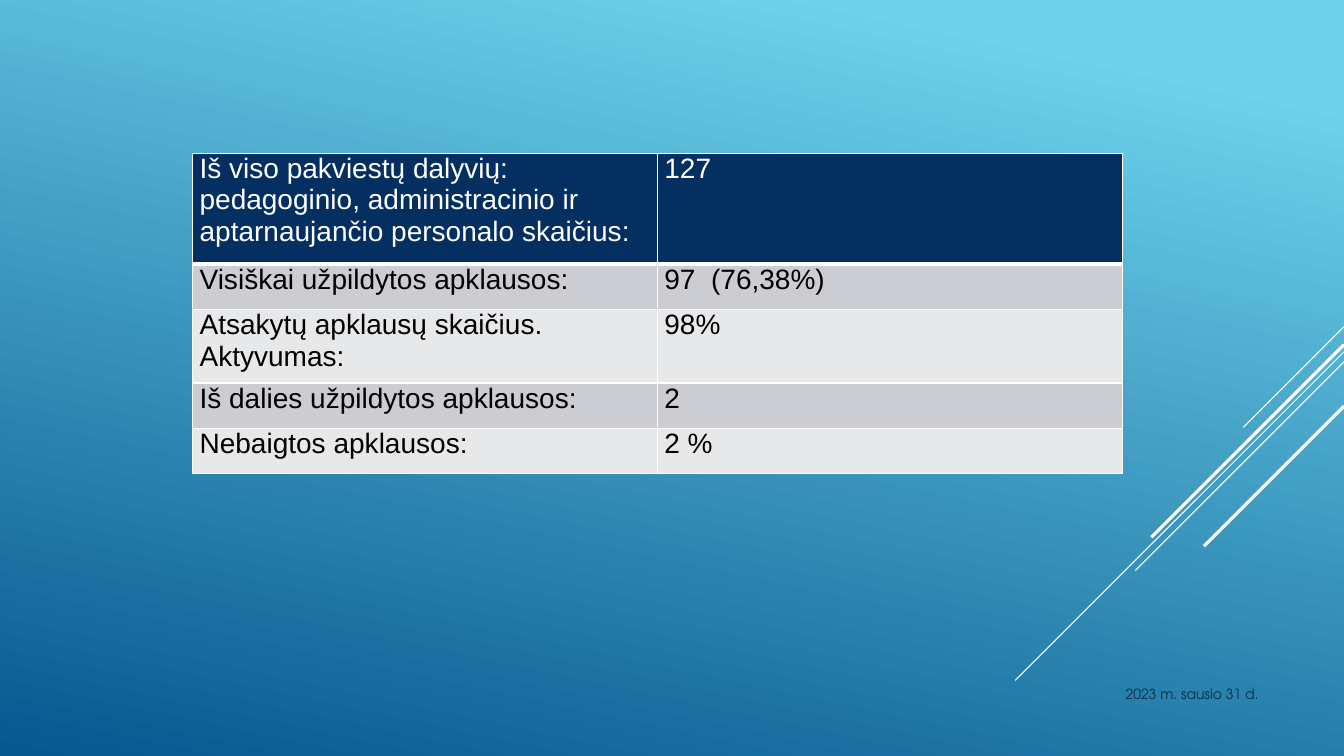
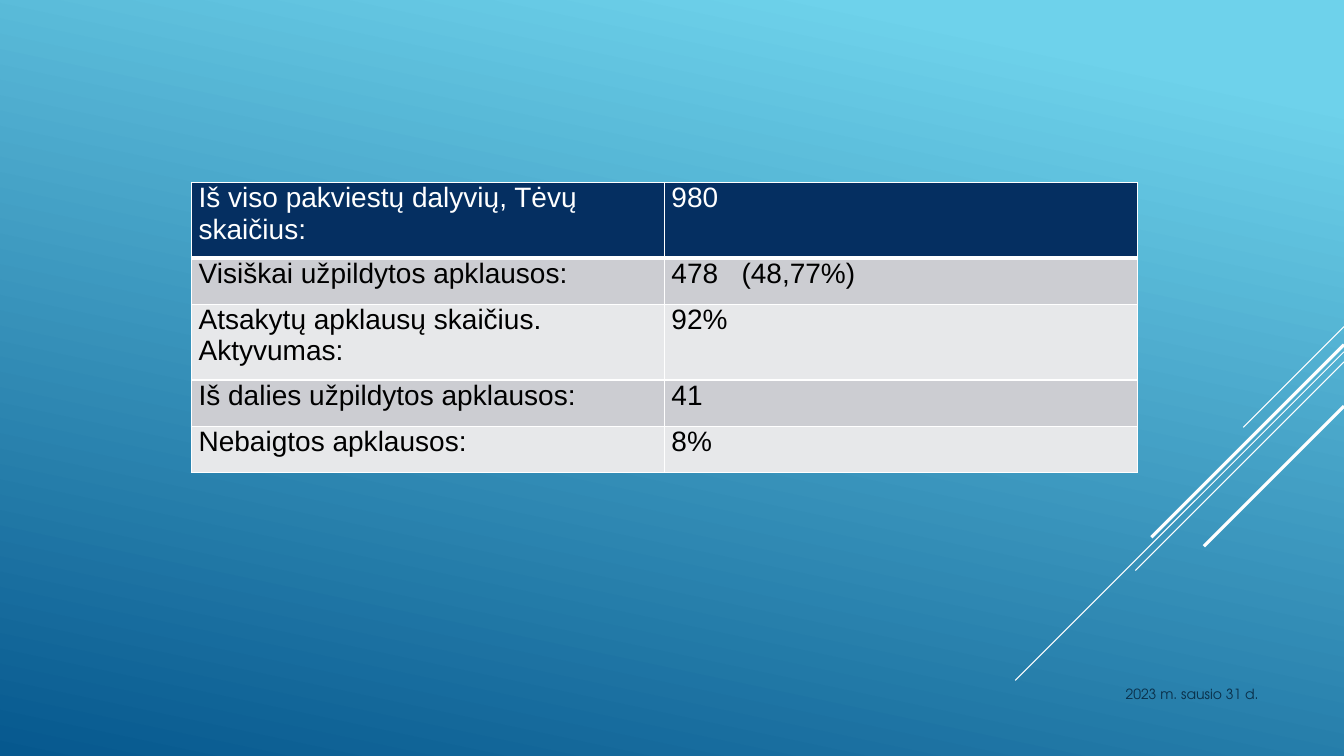
from dataclasses import dataclass
from lxml import etree
from pptx import Presentation, util as u
from pptx.dml.color import RGBColor
from pptx.enum import shapes, text
from pptx.oxml.ns import qn


@dataclass(frozen=True)
class Theme:
    sky: str = "6ED2EB"
    sea: str = "06588E"
    navy: str = "052F61"
    bands: tuple = ("CCCDD2", "E7E8EA")
    white: str = "FFFFFF"
    black: str = "000000"
    date_ink: str = "0A304A"
    table_font: str = "Arial"
    date_font: str = "TeX Gyre Adventor"
    table_size: int = 20
    date_size: int = 10
    rule: int = 1
    header_rule: int = 3


THEME = Theme()
WIDTH, HEIGHT = 13.33, 7.5
DATE = "2023 m. sausio 31 d."
LABELS = [
    "Visiškai užpildytos apklausos:",
    "Atsakytų apklausų skaičius. Aktyvumas:",
    "Iš dalies užpildytos apklausos:",
    "Nebaigtos apklausos:",
]
SURVEYS = [
    {
        "invited": "Iš viso pakviestų dalyvių: pedagoginio, administracinio ir "
                   "aptarnaujančio personalo skaičius:",
        "answers": ["127", "97  (76,38%)", "98%", "2", "2 %"],
        "corner": (1.91, 1.52), "column": 4.61,
        "rows": [1.1, 0.45, 0.73, 0.45, 0.45],
    },
    {
        "invited": "Iš viso pakviestų dalyvių, Tėvų skaičius:",
        "answers": ["980", "478   (48,77%)", "92%", "41", "8%"],
        "corner": (1.9, 1.81), "column": 4.69,
        "rows": [0.75, 0.46, 0.75, 0.46, 0.46],
    },
]
# (top at the right edge, reach of the 45 degree diagonal, weight)
DIAGONALS = [
    (3.24, 1.0, 0.75),
    (3.49, 3.26, 0.75),
    (3.59, 2.07, 0.75),
    (3.42, 1.91, 2.25),
    (4.03, 1.39, 2.25),
]


def rgb(value):
    return RGBColor.from_string(value)


def style(paragraph, font_name, size, color):
    font = paragraph.font
    font.name, font.size, font.bold = font_name, u.Pt(size), False
    font.color.rgb = rgb(color)


def paint_background(master):
    fill = master.background.fill
    fill.gradient()
    fill.gradient_angle = 360 - 102
    for stop, position, color in zip(fill.gradient_stops, (0.1, 1), (THEME.sky, THEME.sea)):
        stop.position = position
        stop.color.rgb = rgb(color)


def add_diagonals(master, slide):
    for number, (top, reach, weight) in enumerate(DIAGONALS, 20):
        diagonal = slide.shapes.add_connector(
            shapes.MSO_CONNECTOR.STRAIGHT, u.Inches(WIDTH), u.Inches(top),
            u.Inches(WIDTH - reach), u.Inches(top + reach))
        diagonal.line.color.rgb = rgb(THEME.white)
        diagonal.line.width = u.Pt(weight)
        element = diagonal._element
        etree.SubElement(element.spPr, qn("a:effectLst"))
        element.nvCxnSpPr.cNvPr.id = number
        master.shapes._spTree.append(element)


def add_date(slide):
    frame = slide.shapes.add_textbox(*map(u.Inches, (10.83, 6.75, 1.75, 0.4))).text_frame
    frame.word_wrap = True
    paragraph = frame.paragraphs[0]
    paragraph.text = DATE
    paragraph.alignment = text.PP_ALIGN.RIGHT
    style(paragraph, THEME.date_font, THEME.date_size, THEME.date_ink)


def set_borders(cell, **widths):
    properties = cell._tc.get_or_add_tcPr()
    for place, side in enumerate("LRTB"):
        border = etree.Element(qn(f"a:ln{side}"), w=str(u.Pt(widths.get(side, THEME.rule))))
        solid = etree.SubElement(border, qn("a:solidFill"))
        etree.SubElement(solid, qn("a:srgbClr"), val=THEME.white)
        properties.insert(place, border)


def fill_cell(cell, content, row):
    header = row == 0
    cell.margin_left = cell.margin_right = u.Inches(0.07)
    cell.margin_top = cell.margin_bottom = 0
    cell.text = content
    style(cell.text_frame.paragraphs[0], THEME.table_font, THEME.table_size,
          THEME.white if header else THEME.black)
    cell.fill.solid()
    cell.fill.fore_color.rgb = rgb(THEME.navy if header else THEME.bands[(row - 1) % 2])
    heavy = {0: {"B": THEME.header_rule}, 1: {"T": THEME.header_rule}}
    set_borders(cell, **heavy.get(row, {}))


def add_results(slide, survey):
    entries = list(zip([survey["invited"], *LABELS], survey["answers"]))
    size = (2 * survey["column"], sum(survey["rows"]))
    table = slide.shapes.add_table(
        len(entries), 2, *map(u.Inches, survey["corner"] + size)).table
    for column in table.columns:
        column.width = u.Inches(survey["column"])
    for row, (entry, height) in enumerate(zip(entries, survey["rows"])):
        table.rows[row].height = u.Inches(height)
        for column, content in enumerate(entry):
            fill_cell(table.cell(row, column), content, row)


def main():
    deck = Presentation()
    deck.slide_width, deck.slide_height = u.Inches(WIDTH), u.Inches(HEIGHT)
    paint_background(deck.slide_master)
    slides = [deck.slides.add_slide(deck.slide_layouts[6]) for _ in SURVEYS]
    add_diagonals(deck.slide_master, slides[0])
    for slide, survey in zip(slides, SURVEYS):
        add_date(slide)
        add_results(slide, survey)
    deck.save("out.pptx")


if __name__ == "__main__":
    main()
